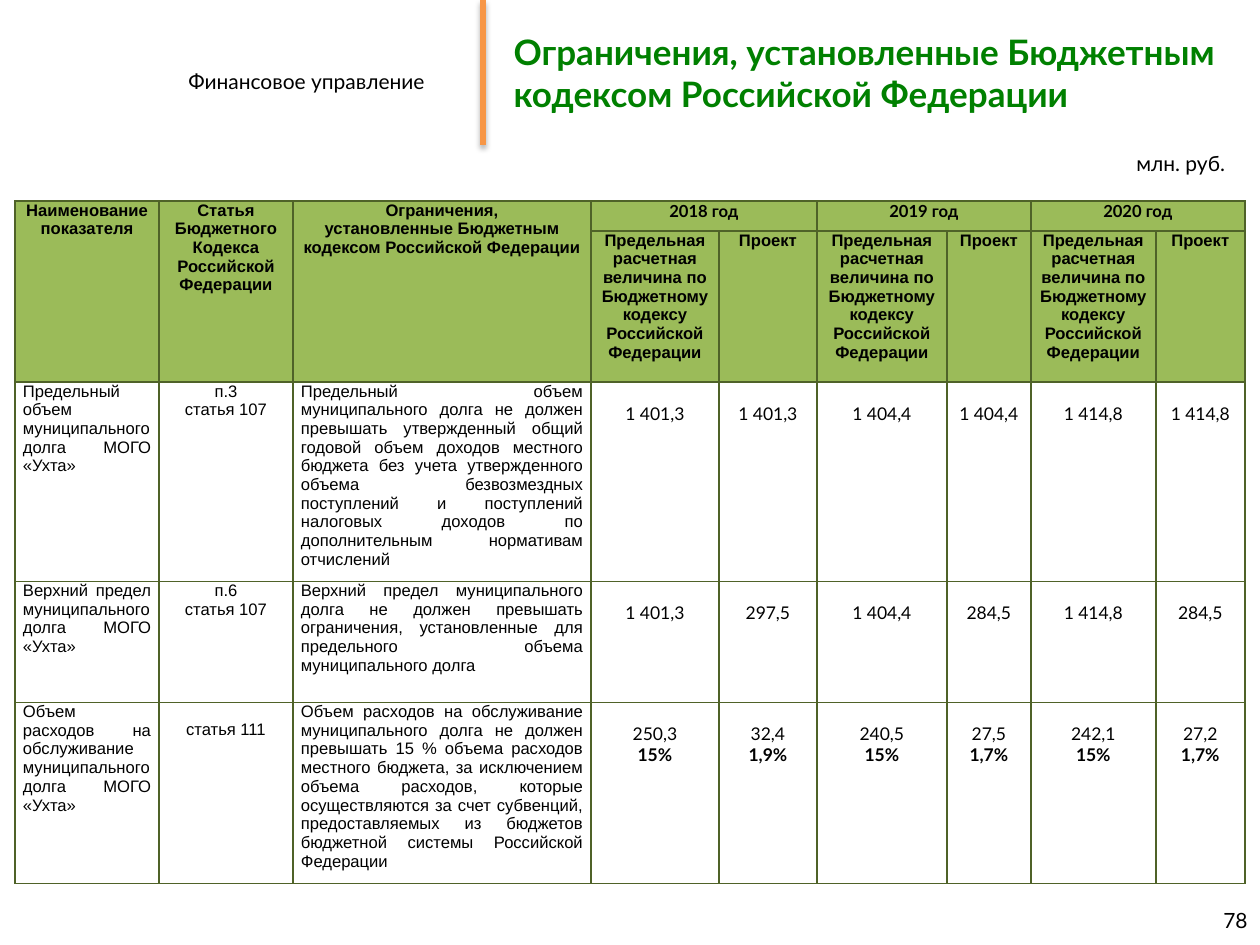
from lxml import etree
from pptx import Presentation
from pptx.dml.color import RGBColor
from pptx.enum.shapes import MSO_CONNECTOR
from pptx.enum.text import MSO_ANCHOR, PP_ALIGN
from pptx.oxml import parse_xml
from pptx.oxml.ns import nsdecls, qn
from pptx.util import Emu, Pt

BLACK = RGBColor(0x00, 0x00, 0x00)
GREEN = RGBColor(0x00, 0x80, 0x00)
ORANGE = RGBColor(0xF7, 0x96, 0x46)
HEADER = RGBColor(0x9B, 0xBB, 0x59)
BORDER = RGBColor(0x4F, 0x62, 0x28)


def px(n):
    return Emu(round(n * 914400 / 126))


def write(tf, text, size, font="Lato", color=BLACK, bold=False, align=PP_ALIGN.LEFT):
    tf.text = text
    for p in tf.paragraphs:
        p.alignment = align
        p.font.size = Pt(size)
        p.font.name = font
        p.font.bold = bold
        p.font.color.rgb = color


prs = Presentation()
prs.slide_width, prs.slide_height = px(1260), px(945)
s = prs.slides.add_slide(prs.slide_layouts[5])

title = s.shapes.title
title.left, title.top, title.width, title.height = px(501), px(0), px(759), px(145)
title.text_frame.vertical_anchor = MSO_ANCHOR.MIDDLE
write(title.text_frame, "Ограничения, установленные Бюджетным кодексом Российской Федерации",
      20, color=GREEN, bold=True)

divider = s.shapes.add_connector(MSO_CONNECTOR.STRAIGHT, px(483), px(0), px(483), px(145))
divider.line.color.rgb = ORANGE
divider.line.width = Pt(3)
divider._element.spPr.append(parse_xml(
    f'<a:effectLst {nsdecls("a")}><a:outerShdw blurRad="39370" dist="22860" dir="5400000" '
    'rotWithShape="0"><a:srgbClr val="000000"><a:alpha val="35000"/></a:srgbClr>'
    '</a:outerShdw></a:effectLst>'))

labels = [
    ("Финансовое управление", 176, 50, 265, 45, False, PP_ALIGN.LEFT, MSO_ANCHOR.TOP, 1.5),
    ("млн. руб.", 1124, 144, 116, 38, False, PP_ALIGN.LEFT, MSO_ANCHOR.TOP, 1),
    ("78", 966, 895, 294, 50, True, PP_ALIGN.RIGHT, MSO_ANCHOR.MIDDLE, 1),
]
for text, x, y, w, h, wrap, align, anchor, spacing in labels:
    tf = s.shapes.add_textbox(px(x), px(y), px(w), px(h)).text_frame
    tf.word_wrap = wrap
    tf.vertical_anchor = anchor
    write(tf, text, 12, align=align)
    tf.paragraphs[0].line_spacing = spacing

LIMIT = "Предельная расчетная величина по Бюджетному кодексу Российской Федерации"
rows = [
    ["Наименование показателя", "Статья Бюджетного Кодекса Российской Федерации",
     "Ограничения,\nустановленные Бюджетным кодексом Российской Федерации",
     "2018 год", "", "2019 год", "", "2020 год", ""],
    ["", "", ""] + [LIMIT, "Проект"] * 3,
    ["Предельный объем муниципального долга МОГО «Ухта»", "п.3\nстатья 107",
     "Предельный объем муниципального долга не должен превышать утвержденный общий годовой "
     "объем доходов местного бюджета без учета утвержденного объема безвозмездных поступлений "
     "и поступлений налоговых доходов по дополнительным нормативам отчислений",
     "1 401,3", "1 401,3", "1 404,4", "1 404,4", "1 414,8", "1 414,8"],
    ["Верхний предел муниципального долга МОГО «Ухта»", "п.6\nстатья 107",
     "Верхний предел муниципального долга не должен превышать ограничения, установленные "
     "для предельного объема муниципального долга",
     "1 401,3", "297,5", "1 404,4", "284,5", "1 414,8", "284,5"],
    ["Объем расходов на обслуживание муниципального долга МОГО «Ухта»", "статья 111",
     "Объем расходов на обслуживание муниципального долга не должен превышать 15 % объема "
     "расходов местного бюджета, за исключением объема расходов, которые осуществляются за "
     "счет субвенций, предоставляемых из бюджетов бюджетной системы Российской Федерации",
     "250,3\n15%", "32,4\n1,9%", "240,5\n15%", "27,5\n1,7%", "242,1\n15%", "27,2\n1,7%"],
]
widths = [144, 134, 298, 128, 98, 130, 84, 125, 89]
heights = [30, 151, 159, 121, 181]

table = s.shapes.add_table(len(rows), len(widths), px(15), px(201),
                           px(sum(widths)), px(sum(heights))).table
table.first_row = table.horz_banding = False
for col, w in zip(table.columns, widths):
    col.width = px(w)
for row, h in zip(table.rows, heights):
    row.height = px(h)
for c in range(3):
    table.cell(0, c).merge(table.cell(1, c))
for c in (3, 5, 7):
    table.cell(0, c).merge(table.cell(0, c + 1))

for r, row in enumerate(rows):
    for c, text in enumerate(row):
        cell = table.cell(r, c)
        head = r < 2
        number = not head and c > 2
        cell.margin_left = cell.margin_right = px(8)
        cell.margin_top = cell.margin_bottom = 0
        if number:
            cell.margin_top = px(21)
        elif text == "статья 111":
            cell.margin_top = px(18)
        tcPr = cell._tc.get_or_add_tcPr()
        for side in ("lnL", "lnR", "lnT", "lnB"):
            ln = etree.SubElement(tcPr, qn(f"a:{side}"), w=str(Pt(1)))
            fill = etree.SubElement(ln, qn("a:solidFill"))
            etree.SubElement(fill, qn("a:srgbClr"), val=str(BORDER))
        if head:
            cell.fill.solid()
            cell.fill.fore_color.rgb = HEADER
        else:
            cell.fill.background()
        if cell.is_spanned:
            continue
        year = r == 0 and c > 2
        justified = not head and c in (0, 2)
        write(cell.text_frame, text, 10 if number else 9.5,
              "Lato" if number or year else "Arial", bold=head,
              align=PP_ALIGN.JUSTIFY if justified else PP_ALIGN.CENTER)
        if number:
            for p in cell.text_frame.paragraphs[1:]:
                p.font.bold = True

prs.save("out.pptx")
